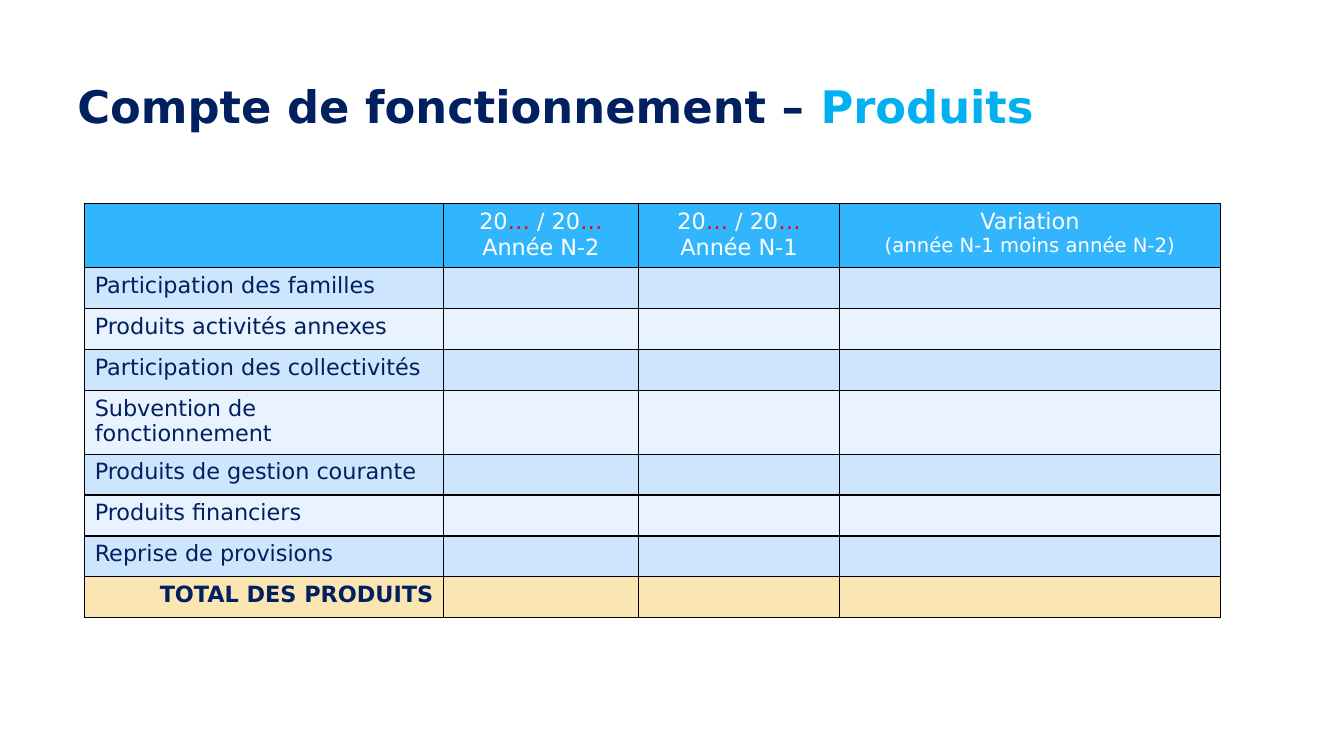
from dataclasses import dataclass

from lxml.etree import SubElement
from pptx import Presentation
from pptx.dml.color import RGBColor
from pptx.enum.text import PP_ALIGN
from pptx.oxml.ns import qn
from pptx.util import Pt


@dataclass(frozen=True)
class Theme:
    """Colours, font and type sizes of the slide."""
    font: str = "DejaVu Sans"
    navy: str = "002060"
    cyan: str = "00B0F0"
    white: str = "FFFFFF"
    red: str = "FF0000"
    border: str = "000000"
    header: str = "31B6FD"
    bands: tuple = ("CEE5FE", "E8F3FF")
    total: str = "FBE6B3"
    title_size: int = 32
    body_size: int = 16
    note_size: int = 14


THEME = Theme()
COLUMN_WIDTHS = (256.3, 139.2, 143.8, 272)
ROW_HEIGHT = 29.25
TALL_ROW_HEIGHT = 44
PRODUCTS = (
    "Participation des familles",
    "Produits activités annexes",
    "Participation des collectivités",
    "Subvention de fonctionnement",
    "Produits de gestion courante",
    "Produits financiers",
    "Reprise de provisions",
)
TOTAL_LABEL = "TOTAL DES PRODUITS"


def write_paragraph(paragraph, runs, size, bold=False, align=PP_ALIGN.LEFT):
    """Write (text, colour) runs in one type size."""
    paragraph.alignment = align
    paragraph.font.name = THEME.font
    paragraph.font.size = Pt(size)
    paragraph.font.bold = bold
    for text, colour in runs:
        run = paragraph.add_run()
        run.text = text
        run.font.color.rgb = RGBColor.from_string(colour)


def add_title(slide, runs):
    """Add the two-coloured slide title."""
    box = slide.shapes.add_textbox(Pt(48.2), Pt(49), Pt(761), Pt(62.6))
    frame = box.text_frame
    frame.word_wrap = True
    frame.margin_top = Pt(7.2)
    write_paragraph(frame.paragraphs[0], runs, THEME.title_size, bold=True)


def style_cell(cell, fill):
    """Fill a cell and draw its four borders."""
    properties = cell._tc.get_or_add_tcPr()
    for side in ("lnL", "lnR", "lnT", "lnB"):
        line = SubElement(properties, qn(f"a:{side}"), w=str(Pt(1)))
        solid = SubElement(line, qn("a:solidFill"))
        SubElement(solid, qn("a:srgbClr"), val=THEME.border)
    cell.fill.solid()
    cell.fill.fore_color.rgb = RGBColor.from_string(fill)


def write_header(cell, first_runs, second_text, second_size):
    """Write a centred two-line column heading."""
    frame = cell.text_frame
    write_paragraph(frame.paragraphs[0], first_runs, THEME.body_size,
                    align=PP_ALIGN.CENTER)
    write_paragraph(frame.add_paragraph(), [(second_text, THEME.white)],
                    second_size, align=PP_ALIGN.CENTER)


def add_products_table(slide):
    """Add the table of products by year with its total row."""
    fills = [THEME.header]
    fills += [THEME.bands[index % 2] for index in range(len(PRODUCTS))]
    fills.append(THEME.total)
    heights = [ROW_HEIGHT] * len(fills)
    subsidy_row = PRODUCTS.index("Subvention de fonctionnement") + 1
    heights[0] = heights[subsidy_row] = TALL_ROW_HEIGHT
    table = slide.shapes.add_table(
        len(fills), len(COLUMN_WIDTHS), Pt(60.5), Pt(145.5),
        Pt(sum(COLUMN_WIDTHS)), Pt(sum(heights))).table
    for column, width in zip(table.columns, COLUMN_WIDTHS):
        column.width = Pt(width)
    for row, height, fill in zip(table.rows, heights, fills):
        row.height = Pt(height)
        for cell in row.cells:
            style_cell(cell, fill)
            cell.text_frame.paragraphs[0].font.size = Pt(THEME.body_size)

    school_year = [("20", THEME.white), ("… ", THEME.red),
                   ("/ 20", THEME.white), ("…", THEME.red)]
    write_header(table.cell(0, 1), school_year, "Année N-2", THEME.body_size)
    write_header(table.cell(0, 2), school_year, "Année N-1", THEME.body_size)
    write_header(table.cell(0, 3), [("Variation", THEME.white)],
                 "(année N-1 moins année N-2)", THEME.note_size)

    for index, label in enumerate(PRODUCTS, start=1):
        write_paragraph(table.cell(index, 0).text_frame.paragraphs[0],
                        [(label, THEME.navy)], THEME.body_size)
    write_paragraph(table.cell(len(fills) - 1, 0).text_frame.paragraphs[0],
                    [(TOTAL_LABEL, THEME.navy)], THEME.body_size,
                    bold=True, align=PP_ALIGN.RIGHT)


def main():
    """Build and save the slide."""
    presentation = Presentation()
    presentation.slide_width = Pt(960)
    presentation.slide_height = Pt(540)
    slide = presentation.slides.add_slide(presentation.slide_layouts[6])
    add_title(slide, [("Compte de fonctionnement – ", THEME.navy),
                      ("Produits", THEME.cyan)])
    add_products_table(slide)
    presentation.save("out.pptx")


if __name__ == "__main__":
    main()
